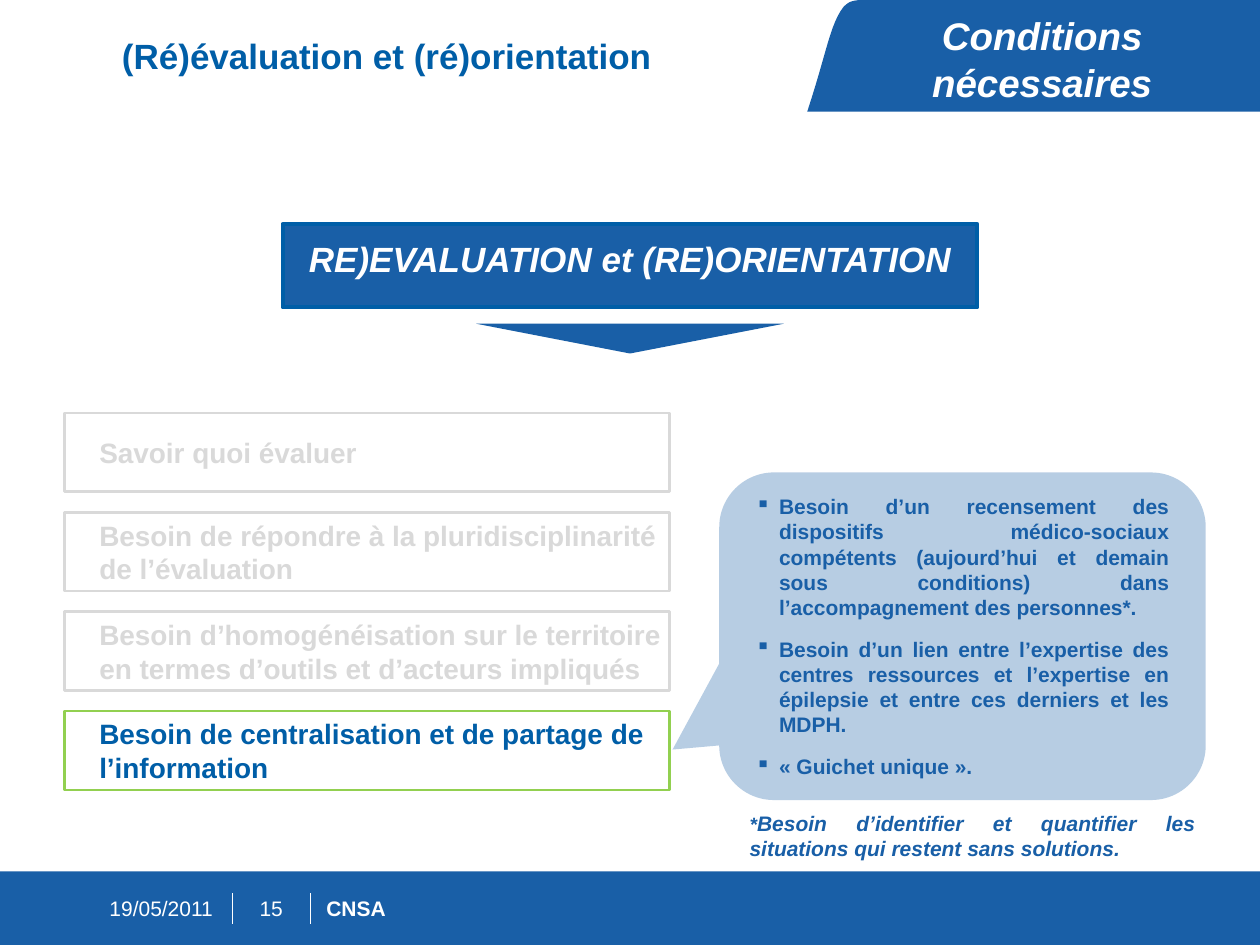
import pptx
import pptx.util
import pptx.dml.color
import pptx.enum.shapes
import pptx.enum.text
import pptx.oxml.ns
from lxml import etree

Pt = pptx.util.Pt
SHAPES = pptx.enum.shapes.MSO_SHAPE
ALIGN = pptx.enum.text.PP_ALIGN
ANCHOR = pptx.enum.text.MSO_ANCHOR

COLOURS = {
    "blue": "195FA7",
    "deep": "005EA7",
    "muted": "D9D9D9",
    "green": "92D050",
    "white": "FFFFFF",
}

NEEDS = [
    ("Savoir quoi évaluer", "muted", "muted"),
    ("Besoin de répondre à la pluridisciplinarité de l’évaluation", "muted", "muted"),
    ("Besoin d’homogénéisation sur le territoire en termes d’outils et d’acteurs impliqués", "muted", "muted"),
    ("Besoin de centralisation et de partage de l’information", "deep", "green"),
]

DETAILS = [
    "Besoin d’un recensement des dispositifs médico-sociaux compétents (aujourd’hui et demain sous conditions) "
    "dans l’accompagnement des personnes*.",
    "Besoin d’un lien entre l’expertise des centres ressources et l’expertise en épilepsie et entre ces derniers "
    "et les MDPH.",
    "« Guichet unique ».",
]


def rgb(name):
    return pptx.dml.color.RGBColor.from_string(COLOURS[name])


def paint(shape, fill, line=None, width=1.5):
    shape.shadow.inherit = False
    shape.fill.solid()
    shape.fill.fore_color.rgb = rgb(fill)
    if line:
        shape.line.color.rgb = rgb(line)
        shape.line.width = Pt(width)
    else:
        shape.line.fill.background()


def add_block(slide, preset, box, fill, line=None, width=1.5):
    block = slide.shapes.add_shape(preset, *map(Pt, box))
    paint(block, fill, line, width)
    return block


def set_frame(shape, insets, anchor=ANCHOR.MIDDLE):
    frame = shape.text_frame
    frame.word_wrap = True
    frame.vertical_anchor = anchor
    frame.margin_left, frame.margin_top, frame.margin_right, frame.margin_bottom = map(Pt, insets)
    return frame


def style(paragraph, size, colour, align=ALIGN.LEFT, bold=True, italic=False):
    paragraph.alignment = align
    font = paragraph.font
    font.name = "Arial"
    font.size = Pt(size)
    font.bold = bold
    font.italic = italic
    font.color.rgb = rgb(colour)


def add_label(slide, box, text, size, colour, insets=(0, 0, 0, 0), anchor=ANCHOR.MIDDLE, **look):
    label = slide.shapes.add_textbox(*map(Pt, box))
    paragraph = set_frame(label, insets, anchor).paragraphs[0]
    paragraph.text = text
    style(paragraph, size, colour, **look)
    return paragraph


def bezier(start, first, second, end, steps=12):
    for step in range(1, steps + 1):
        t = step / steps
        weights = ((1 - t) ** 3, 3 * t * (1 - t) ** 2, 3 * t * t * (1 - t), t ** 3)
        yield tuple(sum(w * p[axis] for w, p in zip(weights, (start, first, second, end))) for axis in (0, 1))


def add_corner_tab(slide, box):
    left, top, width, height = box
    shoulder, bend, foot = (32.4, 0), (21, 3.6), (0, height)
    outline = [shoulder]
    outline += bezier(shoulder, (23.8, 0), (23, 2.2), bend)
    outline += bezier(bend, (13, 13.7), (11.5, 28.8), foot)
    outline += [(width, height)]
    points = [(Pt(left + x), Pt(top + y)) for x, y in outline]
    builder = slide.shapes.build_freeform(Pt(left + width), Pt(top))
    builder.add_line_segments(points, close=True)
    paint(builder.convert_to_shape(), "blue")
    add_label(slide, (left + 29.5, top + 3.6, 209.5, 28), "Conditions nécessaires", 22, "white",
              (7.2, 3.6, 7.2, 3.6), ANCHOR.TOP, align=ALIGN.CENTER, italic=True)


def add_footer(slide, box):
    left, top, width, height = box
    add_block(slide, SHAPES.RECTANGLE, box, "blue")
    entries = [(62.6, 62.6, "19/05/2011", ALIGN.LEFT, False),
               (141, 28, "15", ALIGN.CENTER, False),
               (186.5, 315, "CNSA", ALIGN.LEFT, True)]
    for x, entry_width, text, align, bold in entries:
        add_label(slide, (left + x, top + 11, entry_width, 19.5), text, 12, "white", align=align, bold=bold)
    for x in (133, 177.6):
        divider = slide.shapes.add_connector(pptx.enum.shapes.MSO_CONNECTOR.STRAIGHT, Pt(left + x), Pt(top + 12.3),
                                             Pt(left + x), Pt(top + 29.8))
        divider.line.color.rgb = rgb("white")
        divider.line.width = Pt(0.75)
        etree.SubElement(divider._element.spPr, pptx.oxml.ns.qn("a:effectLst"))


def add_banner(slide, box):
    left, top, width, height = box
    banner = add_block(slide, SHAPES.RECTANGLE, box, "blue", "deep", 2.25)
    paragraph = set_frame(banner, [11.5] * 4).paragraphs[0]
    paragraph.text = "RE)EVALUATION et (RE)ORIENTATION"
    paragraph.line_spacing = Pt(16)
    style(paragraph, 20, "white", ALIGN.CENTER, italic=True)
    arrow_width = 175.7
    arrow = add_block(slide, SHAPES.ISOSCELES_TRIANGLE,
                      (left + (width - arrow_width) / 2, top + height + 9.3, arrow_width, 17), "blue")
    arrow.rotation = 180


def add_needs(slide, box):
    left, top, width, height = box
    row_height = 45
    pitch = (height - row_height) / (len(NEEDS) - 1)
    for index, (text, colour, border) in enumerate(NEEDS):
        row = add_block(slide, SHAPES.RECTANGLE, (left, top + index * pitch, width, row_height), "white", border)
        paragraph = set_frame(row, (5.8, 0, 2.9, 0)).paragraphs[0]
        paragraph.text = text
        paragraph._p.get_or_add_pPr().set("marL", str(Pt(14.2)))
        style(paragraph, 16, colour)


def add_details(slide, box):
    left, top, width, height = box
    callout = add_block(slide, SHAPES.ROUNDED_RECTANGULAR_CALLOUT, box, "blue")
    for index, value in enumerate((-0.596, 0.346, 0.167)):
        callout.adjustments[index] = value
    fill_colour = callout._element.spPr.find(".//" + pptx.oxml.ns.qn("a:srgbClr"))
    etree.SubElement(fill_colour, pptx.oxml.ns.qn("a:alpha"), val="31000")
    frame = set_frame(callout, [11.5] * 4)
    for index, text in enumerate(DETAILS):
        paragraph = frame.add_paragraph() if index else frame.paragraphs[0]
        paragraph.text = text
        properties = paragraph._p.get_or_add_pPr()
        properties.set("marL", str(Pt(13.5)))
        properties.set("indent", str(-Pt(13.5)))
        etree.SubElement(properties, pptx.oxml.ns.qn("a:buChar"), char="▪")
        if index:
            paragraph.space_before = Pt(9.5)
        style(paragraph, 12, "blue", ALIGN.JUSTIFY)
    note = add_label(slide, (left + 5.8, top + height + 11.5, width, 17.3), "*", 12, "blue",
                     [11.5] * 4, align=ALIGN.JUSTIFY, italic=True)
    note.runs[0].font.size = Pt(11)
    note.add_run().text = "Besoin d’identifier et quantifier les situations qui restent sans solutions."


def main():
    deck = pptx.Presentation()
    deck.slide_width, deck.slide_height = Pt(720), Pt(540)
    slide = deck.slides.add_slide(deck.slide_layouts[6])
    add_corner_tab(slide, (461.3, 0, 258.7, 63.8))
    add_footer(slide, (0, 498, 720, 42))
    title = add_label(slide, (62.6, 18, 391, 28), "(Ré)évaluation et (ré)orientation", 20, "deep",
                      (7.2, 3.6, 7.2, 3.6), ANCHOR.TOP)
    title.line_spacing = 0.95
    add_banner(slide, (161.5, 128, 397, 47.7))
    add_needs(slide, (36.7, 236, 345.9, 215.4))
    add_details(slide, (411, 270, 278, 187.2))
    deck.save("out.pptx")


if __name__ == "__main__":
    main()
